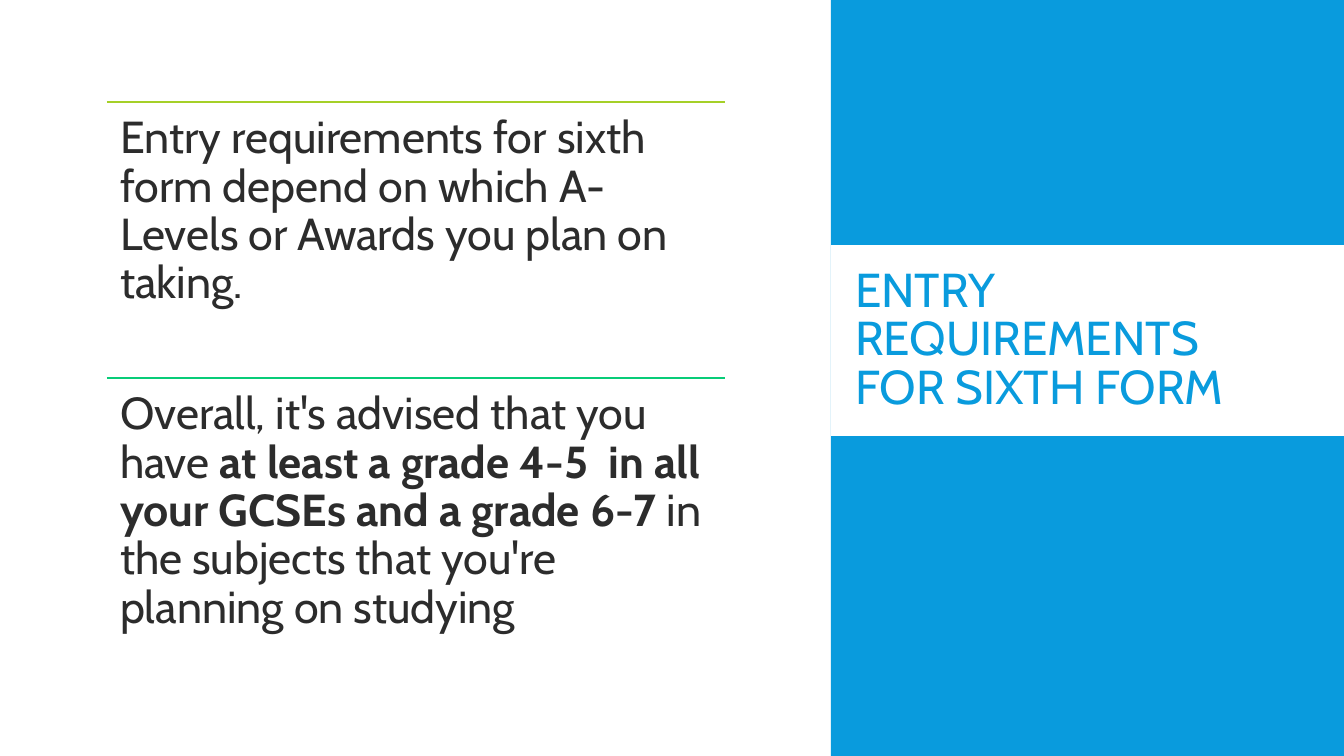
import pptx
import pptx.util
import pptx.dml.color
import pptx.enum.shapes
import pptx.enum.text
import pptx.oxml.ns
import lxml.etree

PX = 12192000 / 1344
COLOURS = {
    "blue": "099BDD",
    "white": "FFFFFF",
    "ink": "2C2C2C",
    "lime": "A5D028",
    "green": "08CC78",
}


def px(*lengths):
    return [pptx.util.Emu(round(length * PX)) for length in lengths]


def add_span(para, text, size, colour, bold=False):
    span = para.add_run()
    span.text = text
    span.font.name = "Cabin"
    span.font.size = pptx.util.Pt(size)
    span.font.bold = bold
    span.font.color.rgb = pptx.dml.color.RGBColor.from_string(COLOURS[colour])


deck = pptx.Presentation()
deck.slide_width, deck.slide_height = px(1344, 756)
page = deck.slides.add_slide(deck.slide_layouts[5])

for top, height, colour in [(0, 756, "blue"), (245, 191, "white")]:
    panel = page.shapes.add_shape(
        pptx.enum.shapes.MSO_SHAPE.RECTANGLE, *px(831, top, 513, height))
    panel.shadow.inherit = False
    panel.fill.solid()
    panel.fill.fore_color.rgb = pptx.dml.color.RGBColor.from_string(COLOURS[colour])
    panel.line.fill.background()

title = page.shapes.title
page.shapes.element.append(title.element)
title.left, title.top, title.width, title.height = px(845, 258, 456, 166)
title.text_frame.word_wrap = True
title.text_frame.auto_size = pptx.enum.text.MSO_AUTO_SIZE.NONE
title.text_frame.vertical_anchor = pptx.enum.text.MSO_ANCHOR.MIDDLE
heading = title.text_frame.paragraphs[0]
heading.alignment = pptx.enum.text.PP_ALIGN.LEFT
heading.line_spacing = 0.85
add_span(heading, "ENTRY REQUIREMENTS FOR SIXTH FORM", 34, "blue")

LEFT, TOP, WIDTH, HEIGHT = 107, 102, 618, 276
INSET = px(13)[0]
requirements = [
    ("lime", [
        ("Entry requirements for sixth form depend on which A-Levels or Awards "
         "you plan on taking.", False),
    ]),
    ("green", [
        ("Overall, it's advised that you have ", False),
        ("at least a grade 4-5  in all your GCSEs and a grade 6-7 ", True),
        ("in the subjects that you're planning on studying", False),
    ]),
]

for row, (colour, spans) in enumerate(requirements):
    top = TOP + row * HEIGHT
    rule = page.shapes.add_connector(
        pptx.enum.shapes.MSO_CONNECTOR.STRAIGHT, *px(LEFT, top, LEFT + WIDTH, top))
    rule.line.width = pptx.util.Pt(1)
    rule.line.color.rgb = pptx.dml.color.RGBColor.from_string(COLOURS[colour])
    lxml.etree.SubElement(rule.element.spPr, pptx.oxml.ns.qn("a:effectLst"))

    box = page.shapes.add_textbox(*px(LEFT, top, WIDTH, HEIGHT))
    frame = box.text_frame
    frame.word_wrap = True
    frame.margin_left = frame.margin_right = INSET
    frame.margin_top = frame.margin_bottom = INSET
    para = frame.paragraphs[0]
    para.line_spacing = 0.9
    for text, bold in spans:
        add_span(para, text, 32, "ink", bold)

deck.save("out.pptx")
